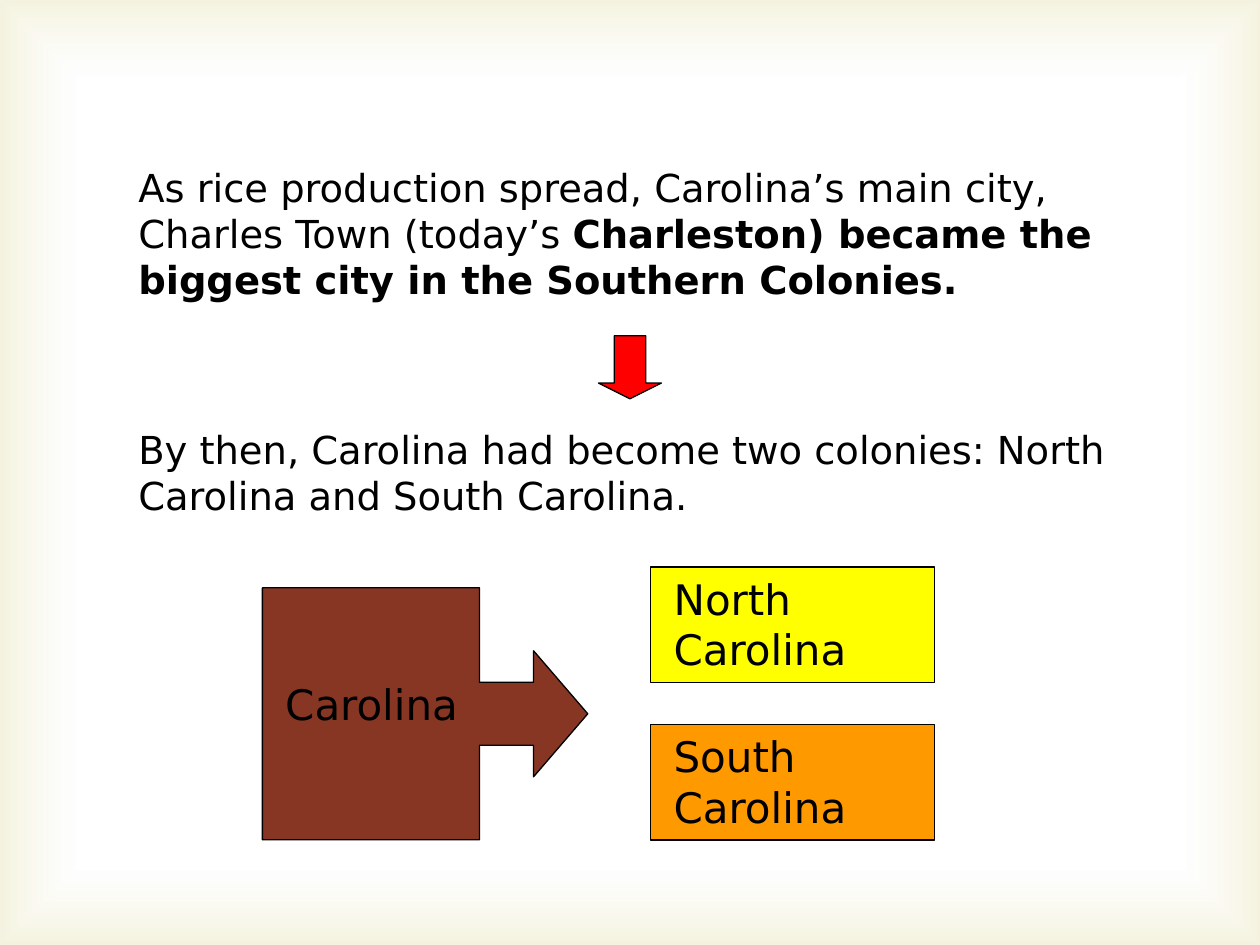
"""Build a slide on how Carolina became two colonies."""
from lxml.etree import SubElement as Sub
from pptx import Presentation
from pptx.dml.color import RGBColor as Rgb
from pptx.enum.shapes import MSO_SHAPE as Kind
from pptx.enum.text import MSO_AUTO_SIZE as Auto
from pptx.oxml.ns import qn
from pptx.util import Cm, Pt

THEME = {
    "font": "DejaVu Sans", "body": 22, "label": 24, "line": 0.75,
    "ink": "000000", "red": "FF0000", "brown": "873624",
    "north": "FFFF00", "south": "FF9900",
    "glow": [(83, "FFFFFF", 11), (100, "D1CA75", 23)],
}
WIDE, HIGH = 25.4, 19.05
FACTS = [
    (3.18, 3.05, [
        ("As rice production spread, Carolina’s main city, "
         "Charles Town (today’s ", False),
        ("Charleston) became the biggest city in the Southern Colonies.", True),
    ]),
    (8.46, 2.11, [
        ("By then, Carolina had become two colonies: "
         "North Carolina and South Carolina.", False),
    ]),
]
MARGIN = 2.54
ARROW = 1.27
OLD = {"name": "Carolina", "box": (5.29, 11.85, 6.56, 5.08),
       "text": (5.5, 13.55, 4.24, 1.27), "adj": (0.25, 0.25, 0.215, 0.667)}
NEW = [("North Carolina", "north"), ("South Carolina", "south")]
LEFT, TOP, STEP = 13.12, 11.43, 3.175


def cms(box):
    return [Cm(n) for n in box]


def draw(home, kind, box, hue, adj=()):
    shape = home.add_shape(kind, *cms(box))
    shape.shadow.inherit = False
    shape.fill.solid()
    shape.fill.fore_color.rgb = Rgb.from_string(THEME[hue])
    shape.line.color.rgb = Rgb.from_string(THEME["ink"])
    shape.line.width = Pt(THEME["line"])
    for i, part in enumerate(adj):
        shape.adjustments[i] = part


def write(home, box, runs, size):
    frame = home.add_textbox(*cms(box)).text_frame
    frame.word_wrap = True
    frame.auto_size = Auto.SHAPE_TO_FIT_TEXT
    para = frame.paragraphs[0]
    para.font.name = THEME["font"]
    para.font.size = Pt(THEME[size])
    para.font.color.rgb = Rgb.from_string(THEME["ink"])
    for text, bold in runs:
        run = para.add_run()
        run.text = text
        if bold:
            run.font.bold = True


def glow(home):
    pane = home.add_shape(Kind.RECTANGLE, *cms((0, 0, WIDE, HIGH)))
    pane.shadow.inherit = False
    pane.line.fill.background()
    pane.fill.gradient()
    grad = pane._element.spPr.find(qn("a:gradFill"))
    for node in list(grad):
        grad.remove(node)
    stops = Sub(grad, qn("a:gsLst"))
    for pos, hue, alpha in THEME["glow"]:
        stop = Sub(stops, qn("a:gs"), pos=str(pos * 1000))
        color = Sub(stop, qn("a:srgbClr"), val=hue)
        Sub(color, qn("a:alpha"), val=str(alpha * 1000))
    way = Sub(grad, qn("a:path"), path="rect")
    Sub(way, qn("a:fillToRect"), **dict.fromkeys("ltrb", "50000"))


def main():
    deck = Presentation()
    deck.slide_width, deck.slide_height = Cm(WIDE), Cm(HIGH)
    home = deck.slides.add_slide(deck.slide_layouts[6]).shapes
    glow(home)
    for top, high, runs in FACTS:
        write(home, (MARGIN, top, WIDE - 2 * MARGIN, high), runs, "body")
    draw(home, Kind.DOWN_ARROW, ((WIDE - ARROW) / 2, 6.77, ARROW, ARROW),
         "red", (0.5, 0.25))
    group = home.add_group_shape().shapes
    draw(group, Kind.RIGHT_ARROW_CALLOUT, OLD["box"], "brown", OLD["adj"])
    write(group, OLD["text"], [(OLD["name"], False)], "label")
    for i, (name, hue) in enumerate(NEW):
        top = TOP + i * STEP
        group = home.add_group_shape().shapes
        draw(group, Kind.RECTANGLE, (LEFT, top, 5.72, 2.33), hue)
        write(group, (LEFT + 0.21, top, 5.08, 2.29), [(name, False)], "label")
    deck.save("out.pptx")


if __name__ == "__main__":
    main()
